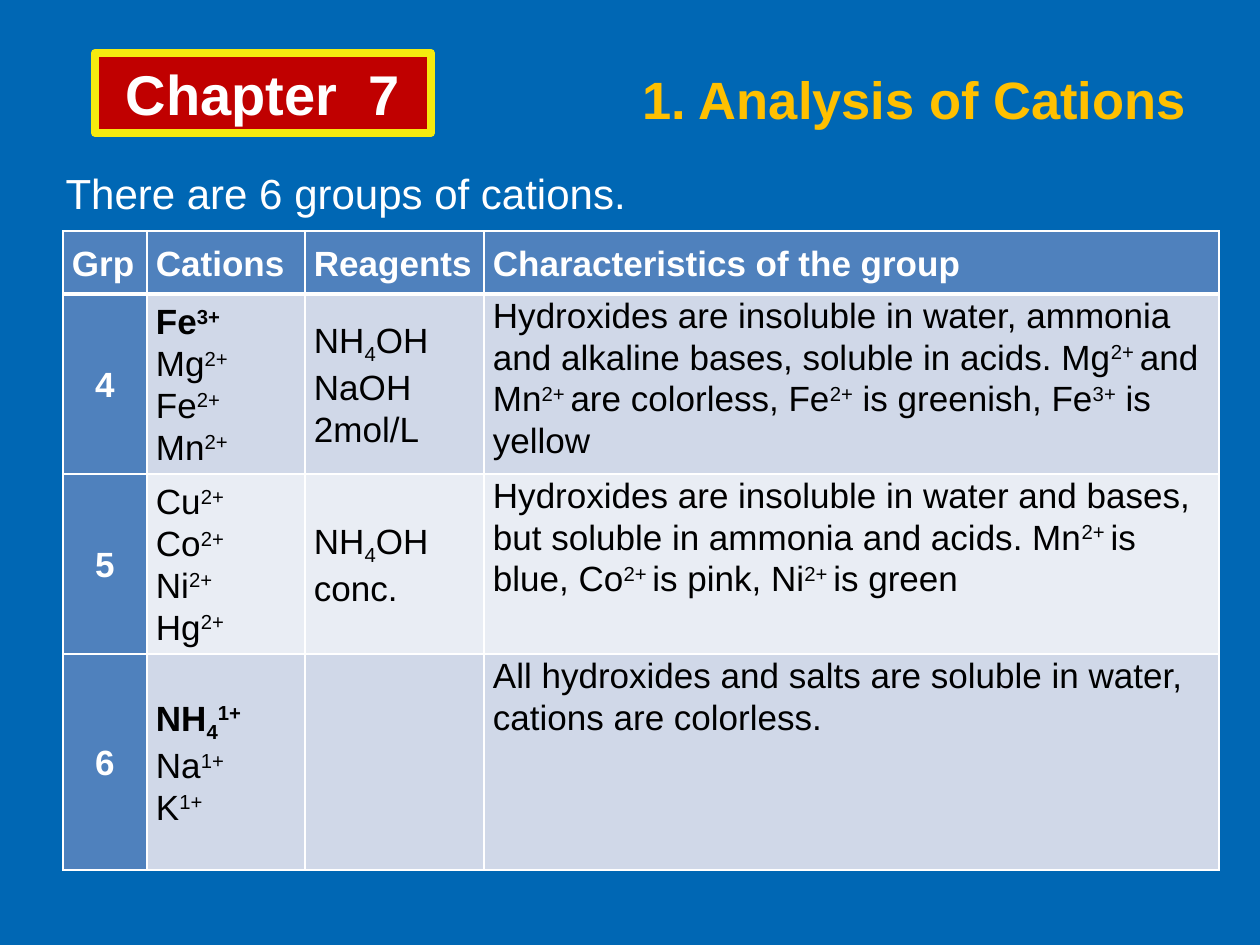
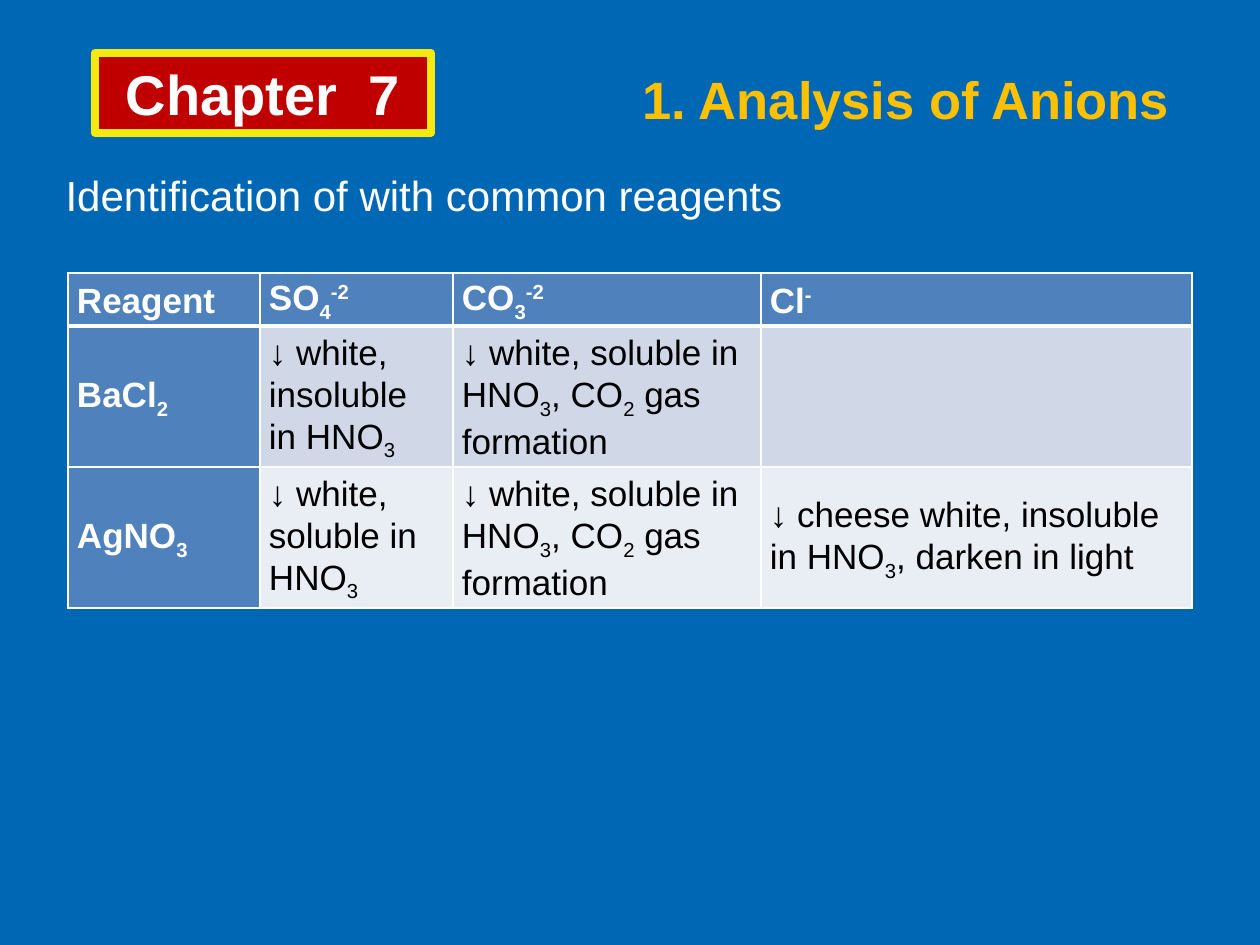
from lxml import etree
from pptx import Presentation
from pptx.dml.color import RGBColor
from pptx.enum.shapes import MSO_SHAPE
from pptx.enum.text import MSO_ANCHOR, MSO_AUTO_SIZE, PP_ALIGN
from pptx.oxml.ns import qn
from pptx.util import Emu, Pt

RECT = MSO_SHAPE.RECTANGLE
TOP, MIDDLE = MSO_ANCHOR.TOP, MSO_ANCHOR.MIDDLE
LEFT, CENTER = PP_ALIGN.LEFT, PP_ALIGN.CENTER
FIXED = MSO_AUTO_SIZE.NONE

FONT = "Arial"
BLUE, RED, YELLOW, GOLD = "0067B4", "C00000", "F5EA0F", "FFC000"
WHITE, BLACK, HEAD = "FFFFFF", "000000", "4F81BD"
BANDS = ["D0D8E8", "E9EDF4"]
BASE = {"^": "30000", "_": "-25000"}
CHAPTER = "Chapter  7"
BADGE = (95, 53, 336, 80)
TITLE = (630, 61, 577, 77)

# "|" parts runs, "^" raises, "_" lowers, "*" makes a line bold
SLIDES = [
    {
        "title": "1. Analysis of Cations",
        "lead": "There are 6 groups of cations.",
        "lead_at": (53, 136, 1166, 79),
        "table_at": (63, 231),
        "cols": [84, 158, 179, 735],
        "heights": [63, 180, 180, 216],
        "center": [0],
        "top": [3],
        "rows": [
            ["Grp", "Cations", "Reagents", "Characteristics of the group"],
            ["4", "*Fe|^3+\nMg|^2+\nFe|^2+\nMn|^2+", "NH|_4|OH\nNaOH\n2mol/L",
             "Hydroxides are insoluble in water, ammonia and alkaline bases, "
             "soluble in acids. Mg|^2+ |and Mn|^2+ |are colorless, Fe|^2+| is "
             "greenish, Fe|^3+| is yellow"],
            ["5", "Cu|^2+\nCo|^2+\nNi|^2+\nHg|^2+", "NH|_4|OH\nconc.",
             "Hydroxides are insoluble in water and bases, but soluble in "
             "ammonia and acids. Mn|^2+ |is blue, Co|^2+ |is pink, Ni|^2+ |is green"],
            ["6", "*NH|_4|^1+\nNa|^1+\nK|^1+", "",
             "All hydroxides and salts are soluble in water, cations are colorless."],
        ],
    },
    {
        "title": "1. Analysis of Anions",
        "lead": "Identification of with common reagents",
        "lead_at": (53, 138, 1166, 79),
        "table_at": (68, 273),
        "cols": [192, 193, 308, 431],
        "heights": [53, 141, 141],
        "center": [],
        "top": [],
        "rows": [
            ["Reagent", "SO|_4|^-2", "CO|_3|^-2", "Cl|^-"],
            ["BaCl|_2", "↓ white, insoluble in HNO|_3",
             "↓ white, soluble in HNO|_3|, CO|_2| gas formation", ""],
            ["AgNO|_3", "↓ white, soluble in HNO|_3",
             "↓ white, soluble in HNO|_3|, CO|_2| gas formation",
             "↓ cheese white, insoluble in HNO|_3|, darken in light"],
        ],
    },
]


def px(n):
    return Emu(round(n * 914400 / 126))


def rgb(code):
    return RGBColor.from_string(code)


def place(shape, box):
    shape.left, shape.top, shape.width, shape.height = map(px, box)


def write(para, text, size, color, bold=False, align=LEFT, space=1.0):
    para.alignment = align
    para.line_spacing = space
    para.space_before = para.space_after = Pt(0)
    for part in text.split("|"):
        base = BASE.get(part[:1])
        run = para.add_run()
        run.text = part[1:] if base else part
        font = run.font
        font.name, font.size, font.bold = FONT, Pt(size), bold
        font.color.rgb = rgb(color)
        if base:
            font._element.set("baseline", base)


def frame(shape, anchor):
    text = shape.text_frame
    text.word_wrap = True
    text.auto_size = FIXED
    text.vertical_anchor = anchor
    return text.paragraphs[0]


def badge(slide):
    box = slide.shapes.add_shape(RECT, *map(px, BADGE))
    box.shadow.inherit = False
    box.fill.solid()
    box.fill.fore_color.rgb = rgb(RED)
    box.line.color.rgb = rgb(YELLOW)
    box.line.width = Pt(4.5)
    etree.SubElement(box.line._ln, qn("a:round"))
    write(frame(box, MIDDLE), CHAPTER, 32, WHITE, True, CENTER)


def border(cell, row):
    props = cell._tc.get_or_add_tcPr()
    widths = {"L": 1, "R": 1, "T": 3 if row == 1 else 1, "B": 1 if row else 3}
    for spot, (side, width) in enumerate(widths.items()):
        line = etree.Element(qn("a:ln" + side), w=str(Pt(width)))
        fill = etree.SubElement(line, qn("a:solidFill"))
        etree.SubElement(fill, qn("a:srgbClr"), val=WHITE)
        props.insert(spot, line)


def fill_cell(cell, text, row, col, data):
    head = row == 0 or col == 0
    cell.fill.solid()
    cell.fill.fore_color.rgb = rgb(HEAD if head else BANDS[(row - 1) % 2])
    border(cell, row)
    cell.margin_left = cell.margin_right = px(9)
    cell.margin_top = cell.margin_bottom = 0
    cell.vertical_anchor = TOP if row and col in data["top"] else MIDDLE
    if not text:
        return
    align = CENTER if row and col in data["center"] else LEFT
    for i, line in enumerate(text.split("\n")):
        para = cell.text_frame.add_paragraph() if i else cell.text_frame.paragraphs[0]
        bold = head or line.startswith("*")
        write(para, line.lstrip("*"), 20, WHITE if head else BLACK, bold, align, 1.07)


def add_grid(slide, data):
    rows, cols, heights = data["rows"], data["cols"], data["heights"]
    box = (*data["table_at"], sum(cols), sum(heights))
    grid = slide.shapes.add_table(len(rows), len(cols), *map(px, box)).table
    grid.first_col = True
    for col, width in zip(grid.columns, cols):
        col.width = px(width)
    for row, height in zip(grid.rows, heights):
        row.height = px(height)
    for r, row in enumerate(rows):
        for c, text in enumerate(row):
            fill_cell(grid.cell(r, c), text, r, c, data)


def add_slide(deck, data):
    slide = deck.slides.add_slide(deck.slide_layouts[1])
    badge(slide)
    title, lead = slide.shapes.title, slide.placeholders[1]
    place(title, TITLE)
    write(frame(title, TOP), data["title"], 30, GOLD, True)
    place(lead, data["lead_at"])
    para = frame(lead, TOP)
    write(para, data["lead"], 24, WHITE, space=1.5)
    props = para._p.get_or_add_pPr()
    props.set("marL", "0")
    props.set("indent", "0")
    etree.SubElement(props, qn("a:buNone"))
    add_grid(slide, data)


def main():
    deck = Presentation()
    deck.slide_width, deck.slide_height = px(1260), px(945)
    back = deck.slide_master.background.fill
    back.solid()
    back.fore_color.rgb = rgb(BLUE)
    for data in SLIDES:
        add_slide(deck, data)
    deck.save("out.pptx")


if __name__ == "__main__":
    main()
